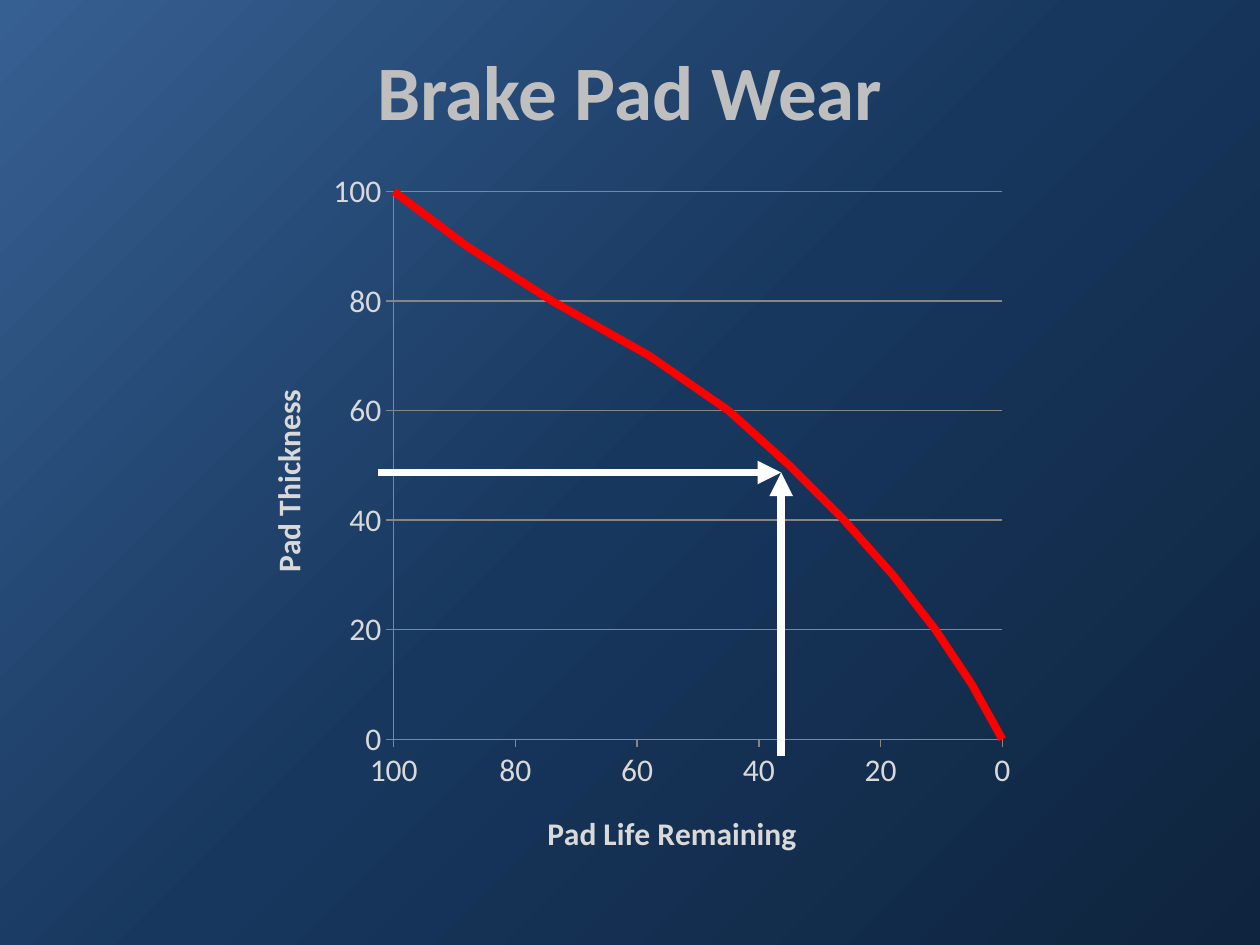
import dataclasses

import pptx
import pptx.chart.data
import pptx.dml.color
import pptx.enum.chart
import pptx.enum.shapes
import pptx.enum.text
import pptx.oxml
import pptx.oxml.ns
import pptx.util

WIDTH, HEIGHT = pptx.util.Inches(10), pptx.util.Inches(7.5)
LIFE_REMAINING = [0, 5, 11, 18, 26, 35, 45, 58, 74, 88, 100]
THICKNESS = range(0, 101, 10)
PLOT_SHARES = {"x": 0.196, "y": 0.043, "w": 0.773, "h": 0.696}


@dataclasses.dataclass(frozen=True)
class Theme:
    """Colours, font and sizes of the slide."""
    font: str = "Calibri"
    title: str = "BFBFBF"
    label: str = "D9D9D9"
    grid: str = "868686"
    wear: str = "FF0000"
    pointer: str = "FFFFFF"
    backdrop: tuple = ((0, "0F243E"), (50, "17375E"), (100, "376092"))
    title_size: int = 44
    label_size: int = 18
    heavy: float = 4.5
    thin: float = 0.75


THEME = Theme()


def share(left, top, width, height):
    """Turn shares of the slide's size into lengths."""
    return [int(part * side) for part, side in
            zip((left, top, width, height), (WIDTH, HEIGHT) * 2)]


def style_font(font, size, color, bold):
    """Apply the theme font with a size, colour and weight."""
    font.name, font.size, font.bold = THEME.font, pptx.util.Pt(size), bold
    font.color.rgb = pptx.dml.color.RGBColor.from_string(color)


def style_line(line, color, width):
    """Give a line its colour and width."""
    line.color.rgb = pptx.dml.color.RGBColor.from_string(color)
    line.width = pptx.util.Pt(width)


def add_child(parent, tag, **attributes):
    """Append an XML element with attributes."""
    child = pptx.oxml.ns.qn(tag)
    element = parent.makeelement(child, attributes)
    parent.append(element)
    return element


def paint_backdrop(slide):
    """Fill the background with a gradient centred on the lower right corner."""
    slide.background.fill.gradient()
    gradient = slide.element.find(".//" + pptx.oxml.ns.qn("a:gradFill"))
    for child in list(gradient):
        gradient.remove(child)
    stops = add_child(gradient, "a:gsLst")
    for percent, color in THEME.backdrop:
        stop = add_child(stops, "a:gs", pos=str(percent * 1000))
        add_child(stop, "a:srgbClr", val=color)
    circle = add_child(gradient, "a:path", path="circle")
    add_child(circle, "a:fillToRect", l="100000", t="100000")


def set_title(slide, wording):
    """Place and format the title."""
    title = slide.shapes.title
    title.left, title.top, title.width, title.height = share(0.05, 0.01, 0.9, 0.17)
    frame = title.text_frame
    frame.text = wording
    frame.vertical_anchor = pptx.enum.text.MSO_ANCHOR.MIDDLE
    paragraph = frame.paragraphs[0]
    paragraph.alignment = pptx.enum.text.PP_ALIGN.CENTER
    style_font(paragraph.runs[0].font, THEME.title_size, THEME.title, True)


def style_axis(axis, wording, gridlines):
    """Scale an axis from 0 to 100 and title it."""
    axis.minimum_scale, axis.maximum_scale, axis.major_unit = 0, 100, 20
    axis.has_major_gridlines = gridlines
    axis.major_tick_mark = pptx.enum.chart.XL_TICK_MARK.OUTSIDE
    axis.tick_labels.number_format = "General"
    axis.tick_labels.number_format_is_linked = False
    style_font(axis.tick_labels.font, THEME.label_size, THEME.label, False)
    style_line(axis.format.line, THEME.grid, THEME.thin)
    if gridlines:
        style_line(axis.major_gridlines.format.line, THEME.grid, THEME.thin)
    frame = axis.axis_title.text_frame
    frame.text = wording
    style_font(frame.paragraphs[0].runs[0].font, THEME.label_size, THEME.label, True)


def fix_plot_area(chart):
    """Pin the inner plot area to shares of the chart's size."""
    plot_area = chart.element.find(".//" + pptx.oxml.ns.qn("c:plotArea"))
    for previous in plot_area.findall(pptx.oxml.ns.qn("c:layout")):
        plot_area.remove(previous)
    layout = add_child(plot_area, "c:layout")
    plot_area.insert(0, layout)
    manual = add_child(layout, "c:manualLayout")
    add_child(manual, "c:layoutTarget", val="inner")
    for side in "xy":
        add_child(manual, f"c:{side}Mode", val="edge")
    for side, portion in PLOT_SHARES.items():
        add_child(manual, f"c:{side}", val=str(portion))


def add_wear_chart(slide):
    """Plot pad thickness against the life that remains."""
    wear_data = pptx.chart.data.XyChartData()
    readings = wear_data.add_series("Series 1")
    for life, thickness in zip(LIFE_REMAINING, THICKNESS):
        readings.add_data_point(life, thickness)
    chart = slide.shapes.add_chart(
        pptx.enum.chart.XL_CHART_TYPE.XY_SCATTER_SMOOTH_NO_MARKERS,
        *share(0.19, 1 / 6, 0.625, 5 / 6), wear_data).chart
    chart.has_legend = chart.has_title = False
    style_font(chart.font, THEME.label_size, THEME.label, False)
    chart.plots[0].vary_by_categories = False
    curve = chart.plots[0].series[0]
    curve.smooth = True
    style_line(curve.format.line, THEME.wear, THEME.heavy)
    style_axis(chart.category_axis, "Pad Life Remaining", False)
    style_axis(chart.value_axis, "Pad Thickness", True)
    chart.category_axis.reverse_order = True
    chart.category_axis.crosses = pptx.enum.chart.XL_AXIS_CROSSES.MAXIMUM
    fix_plot_area(chart)


def add_pointer(slide, start, end):
    """Draw an arrow between two points given as shares of the slide."""
    pointer = slide.shapes.add_connector(
        pptx.enum.shapes.MSO_CONNECTOR.STRAIGHT, *share(*start, *end))
    style_line(pointer.line, THEME.pointer, THEME.heavy)
    add_child(pointer.line._get_or_add_ln(), "a:tailEnd", type="triangle")
    add_child(pointer.element.spPr, "a:effectLst")


def main():
    """Build the brake pad wear slide."""
    deck = pptx.Presentation()
    deck.slide_width, deck.slide_height = WIDTH, HEIGHT
    slide = deck.slides.add_slide(deck.slide_layouts[5])
    paint_backdrop(slide)
    set_title(slide, "Brake Pad Wear")
    add_wear_chart(slide)
    reading = (0.62, 0.5)
    add_pointer(slide, (0.3, 0.5), reading)
    add_pointer(slide, (0.62, 0.8), reading)
    deck.save("out.pptx")


if __name__ == "__main__":
    main()
